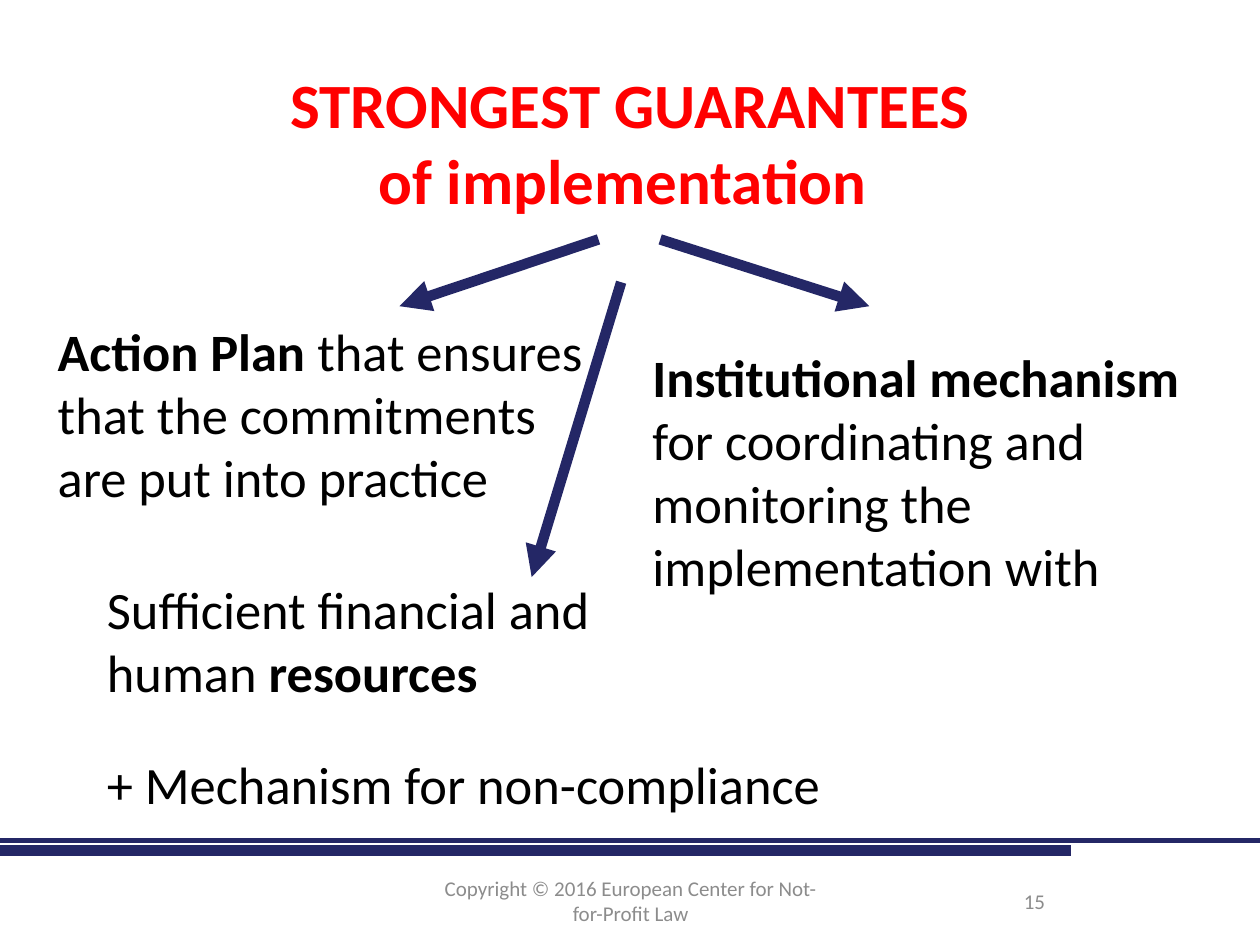
from lxml.etree import SubElement
from pptx import Presentation
from pptx.dml.color import RGBColor
from pptx.enum.shapes import MSO_CONNECTOR
from pptx.enum.text import MSO_ANCHOR, MSO_AUTO_SIZE, PP_ALIGN
from pptx.oxml.ns import qn
from pptx.util import Inches, Pt

NAVY = RGBColor(0x24, 0x27, 0x66)
RED = RGBColor(0xFF, 0x00, 0x00)
BLACK = RGBColor(0x00, 0x00, 0x00)
GRAY = RGBColor(0x8C, 0x8C, 0x8C)

HEAD = {"size": Pt(36), "bold": True, "color": RED}
BODY = {"size": Pt(30), "bold": False, "color": BLACK}
BOLD = {**BODY, "bold": True}
FOOT = {"size": Pt(12), "bold": False, "color": GRAY}

TITLE = (-0.29, 0.47, 10.58, 1.31)
POINTS = [
    ((0.36, 2.48, 4.42, 1.65),
     [("Action Plan ", BOLD),
      ("that ensures that the commitments are put into practice", BODY)]),
    ((5.08, 2.69, 4.67, 2.15),
     [("Institutional mechanism ", BOLD),
      ("for coordinating and monitoring the implementation with", BODY)]),
    ((0.75, 4.53, 4.18, 1.11),
     [("Sufficient financial and human ", BODY), ("resources", BOLD)]),
    ((0.75, 5.92, 7.75, 0.61),
     [("+ Mechanism for non-compliance", BODY)]),
]
ARROWS = [
    (4.75, 1.9, 3.17, 2.43),
    (5.24, 1.9, 6.9, 2.43),
    (4.93, 2.24, 4.22, 4.58),
]


def add_runs(para, runs):
    for text, style in runs:
        run = para.add_run()
        run.text = text
        run.font.name = "Calibri"
        for key, value in style.items():
            if key == "color":
                run.font.color.rgb = value
            else:
                setattr(run.font, key, value)


def add_text(slide, box, runs, align=PP_ALIGN.LEFT, anchor=MSO_ANCHOR.TOP):
    frame = slide.shapes.add_textbox(*map(Inches, box)).text_frame
    frame.word_wrap = True
    frame.vertical_anchor = anchor
    para = frame.paragraphs[0]
    para.alignment = align
    add_runs(para, runs)


def add_line(slide, ends, width, arrow=False):
    line = slide.shapes.add_connector(MSO_CONNECTOR.STRAIGHT, *map(Inches, ends))
    line.line.color.rgb = NAVY
    line.line.width = Pt(width)
    if arrow:
        SubElement(line.line._get_or_add_ln(), qn("a:tailEnd"), type="triangle")
    SubElement(line._element.spPr, qn("a:effectLst"))


def add_title(slide, box):
    title = slide.shapes.title
    title.left, title.top, title.width, title.height = map(Inches, box)
    frame = title.text_frame
    frame.auto_size = MSO_AUTO_SIZE.NONE
    frame.word_wrap = True
    frame.vertical_anchor = MSO_ANCHOR.TOP
    first, second = frame.paragraphs[0], frame.add_paragraph()
    for para, text in ((first, "STRONGEST GUARANTEES"),
                       (second, "of implementation ")):
        para.alignment = PP_ALIGN.CENTER
        add_runs(para, [(text, HEAD)])


def add_footer(slide, top):
    """Draw the two rules, then the copyright line and page number below."""
    add_line(slide, (0, top, 10, top), 3)
    add_line(slide, (0, top + 0.08, 8.5, top + 0.08), 6)
    for left, width, text in (
        (3.42, 3.17, "Copyright © 2016 European Center for Not-for-Profit Law"),
        (6.92, 2.58, "15"),
    ):
        add_text(slide, (left, top + 0.28, width, 0.4), [(text, FOOT)],
                 PP_ALIGN.CENTER, MSO_ANCHOR.MIDDLE)


def main():
    deck = Presentation()
    deck.slide_width, deck.slide_height = Inches(10), Inches(7.5)
    slide = deck.slides.add_slide(deck.slide_layouts[5])
    add_footer(slide, 6.67)
    add_title(slide, TITLE)
    for box, runs in POINTS:
        add_text(slide, box, runs)
    for ends in ARROWS:
        add_line(slide, ends, 6, arrow=True)
    deck.save("out.pptx")


if __name__ == "__main__":
    main()
